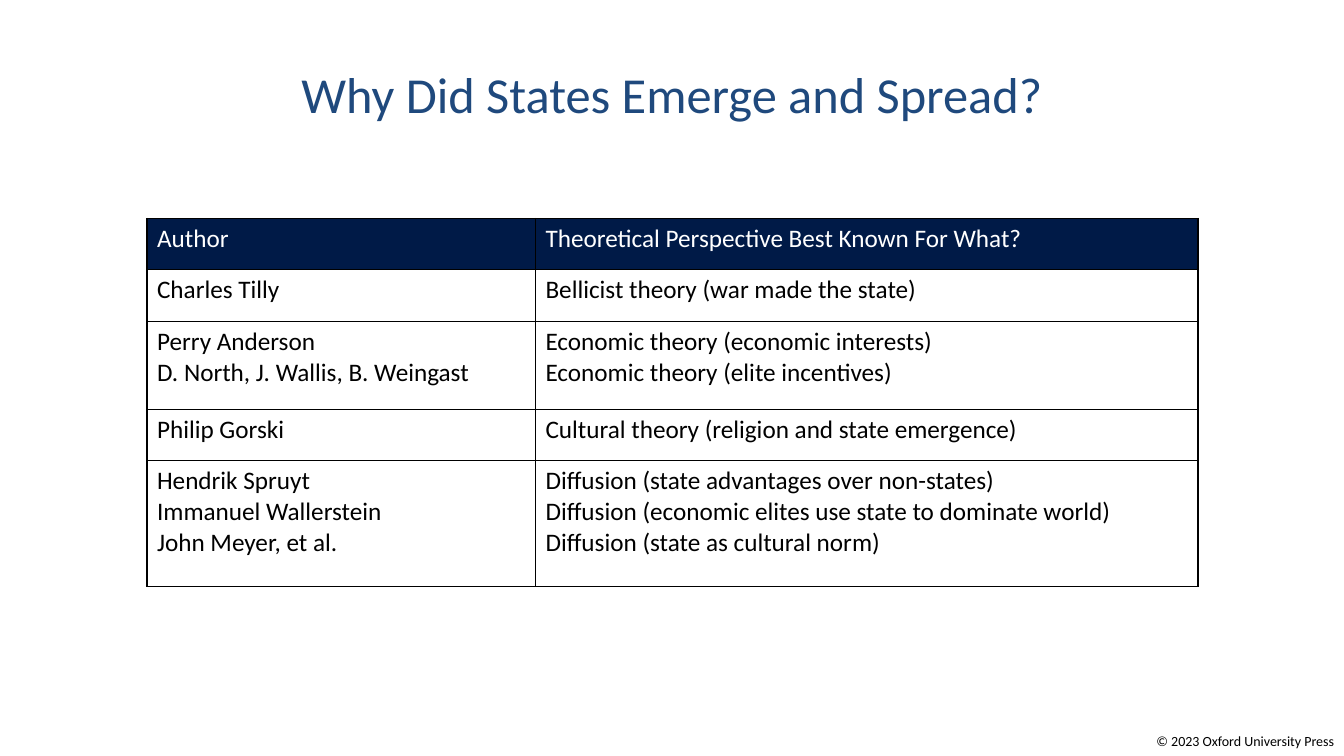
from dataclasses import dataclass

from lxml.etree import SubElement
from pptx import Presentation
from pptx.dml.color import RGBColor
from pptx.enum.text import MSO_ANCHOR, PP_ALIGN
from pptx.oxml.ns import qn
from pptx.util import Emu, Pt

# Content
TITLE = "Why Did States Emerge and Spread?"
CREDIT = "© 2023 Oxford University Press"
ROWS = [
    ("Author", "Theoretical Perspective Best Known For What?"),
    ("Charles Tilly", "Bellicist theory (war made the state)"),
    ("Perry Anderson\nD. North, J. Wallis, B. Weingast",
     "Economic theory (economic interests)\nEconomic theory (elite incentives)"),
    ("Philip Gorski", "Cultural theory (religion and state emergence)"),
    ("Hendrik Spruyt\nImmanuel Wallerstein\nJohn Meyer, et al.",
     "Diffusion (state advantages over non-states)\n"
     "Diffusion (economic elites use state to dominate world)\n"
     "Diffusion (state as cultural norm)"),
]

# Layout in px, 96 to the inch
PAGE = (1280, 720)
TITLE_BOX = (64, 29, 1152, 120)
CREDIT_BOX = (1088, 693, 192, 26)
GRID_AT = (140, 208)
COLS = (370, 631)
HIGH = {1: 49, 2: 84, 3: 120}  # row height by number of lines


@dataclass(frozen=True)
class Theme:
    font: str = "Calibri"
    title: str = "1F497D"
    head: str = "001A47"
    light: str = "FFFFFF"
    ink: str = "000000"
    big: int = 36
    body: int = 18
    small: int = 10
    rule: int = 1


THEME = Theme()


def px(n):
    return Emu(n * 9525)


def style(frame, size, color, align=PP_ALIGN.LEFT):
    look = {"name": THEME.font, "size": Pt(size), "bold": False}
    for para in frame.paragraphs:
        para.alignment = align
        for run in para.runs:
            for key, value in look.items():
                setattr(run.font, key, value)
            run.font.color.rgb = RGBColor.from_string(color)


def border(cell):
    props = cell._tc.get_or_add_tcPr()
    for side in ("lnL", "lnR", "lnT", "lnB"):
        line = SubElement(props, qn("a:" + side), w=str(Pt(THEME.rule)))
        fill = SubElement(line, qn("a:solidFill"))
        SubElement(fill, qn("a:srgbClr"), val=THEME.ink)


def add_title(slide):
    title = slide.shapes.title
    for key, value in zip(("left", "top", "width", "height"), TITLE_BOX):
        setattr(title, key, px(value))
    frame = title.text_frame
    frame.text = TITLE
    frame.vertical_anchor = MSO_ANCHOR.MIDDLE
    style(frame, THEME.big, THEME.title, PP_ALIGN.CENTER)


def add_grid(slide):
    highs = [HIGH[max(text.count("\n") + 1 for text in row)] for row in ROWS]
    size = (sum(COLS), sum(highs))
    grid = slide.shapes.add_table(
        len(ROWS), len(COLS), *map(px, GRID_AT + size)).table
    grid.first_row = grid.horz_banding = False
    for col, width in zip(grid.columns, COLS):
        col.width = px(width)
    for r, (row, high) in enumerate(zip(ROWS, highs)):
        grid.rows[r].height = px(high)
        for c, text in enumerate(row):
            cell = grid.cell(r, c)
            cell.text = text
            border(cell)
            if r == 0:
                cell.fill.solid()
                cell.fill.fore_color.rgb = RGBColor.from_string(THEME.head)
            else:
                cell.fill.background()
            style(cell.text_frame, THEME.body, THEME.ink if r else THEME.light)


def add_credit(slide):
    frame = slide.shapes.add_textbox(*map(px, CREDIT_BOX)).text_frame
    frame.text = CREDIT
    frame.word_wrap = False
    style(frame, THEME.small, THEME.ink, PP_ALIGN.RIGHT)


def main():
    deck = Presentation()
    deck.slide_width, deck.slide_height = map(px, PAGE)
    slide = deck.slides.add_slide(deck.slide_layouts.get_by_name("Title Only"))
    add_credit(slide)
    add_title(slide)
    add_grid(slide)
    deck.save("out.pptx")


if __name__ == "__main__":
    main()
